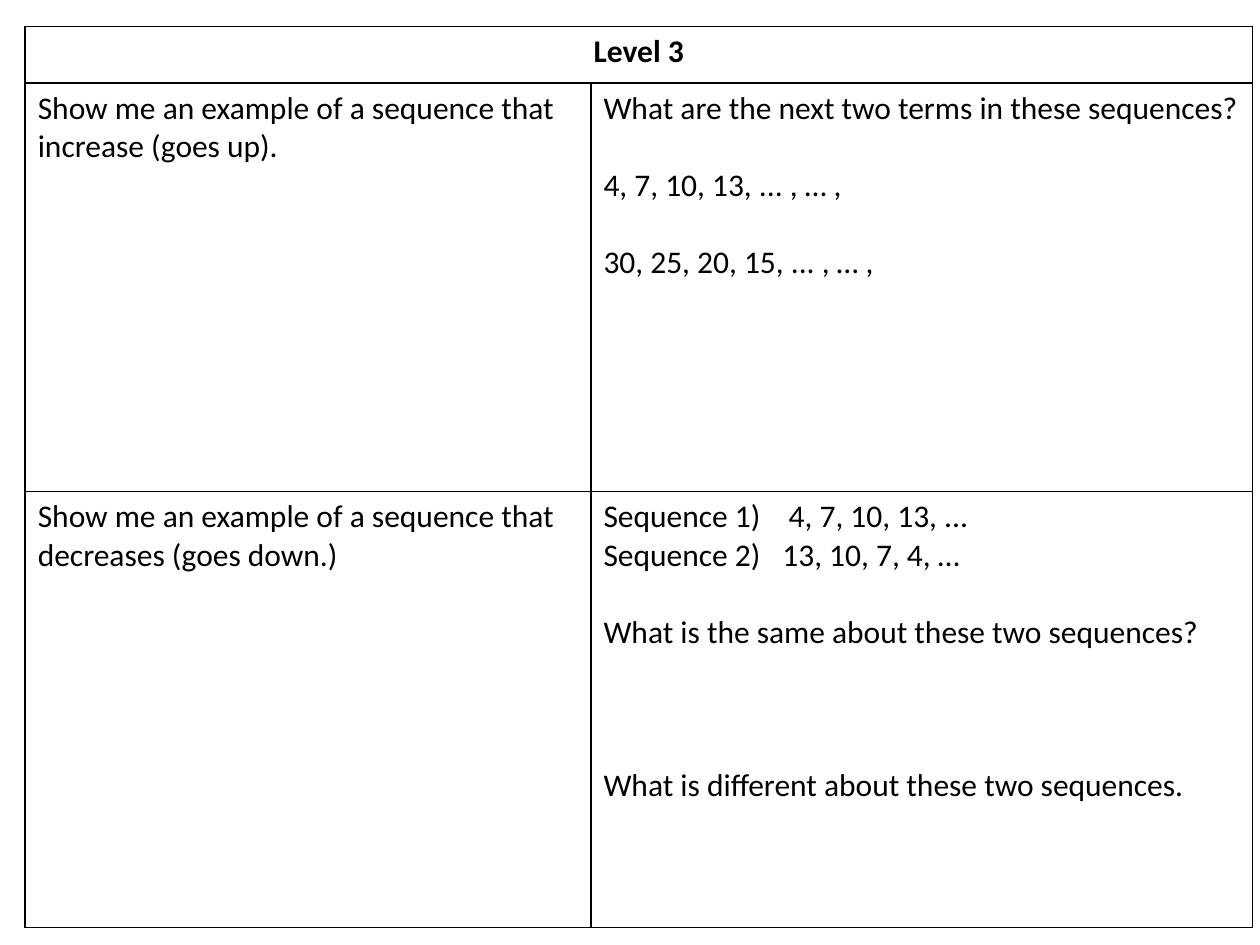
from dataclasses import dataclass

from lxml import etree
from pptx import Presentation, util as u
from pptx.dml.color import RGBColor
from pptx.enum import text as t
from pptx.oxml.ns import qn


@dataclass(frozen=True)
class Theme:
    font: str = "Calibri"
    size: int = 18
    ink: str = "000000"
    rule: float = 1
    line: int = 22  # height of one text line, in points


def write(para, words, theme, bold=False, align=t.PP_ALIGN.LEFT, skip=0, tab=None):
    """Fill a paragraph; skip is the number of lines left open above it."""
    para.alignment = align
    if skip:
        para.space_before = u.Pt(skip * theme.line)
    if tab:
        stops = etree.SubElement(para._p.get_or_add_pPr(), qn("a:tabLst"))
        etree.SubElement(stops, qn("a:tab"), pos=str(u.Inches(tab)), algn="l")
    run = para.add_run()
    run.text = words
    font = run.font
    font.name, font.size, font.bold = theme.font, u.Pt(theme.size), bold
    font.color.rgb = RGBColor.from_string(theme.ink)


class Sheet:
    def __init__(self, slide, theme):
        self.slide, self.theme = slide, theme

    def grid(self, left, top, cols, rows):
        frame = self.slide.shapes.add_table(
            len(rows), len(cols), u.Inches(left), u.Inches(top),
            u.Inches(sum(cols)), u.Inches(sum(rows)))
        table = frame.table
        table.first_row = table.horz_banding = False
        for col, width in zip(table.columns, cols):
            col.width = u.Inches(width)
        for row, height in zip(table.rows, rows):
            row.height = u.Inches(height)
        for cell in table.iter_cells():
            self.frame(cell)
        return table

    def frame(self, cell):
        """Rule all four sides of a cell and clear its fill."""
        props = cell._tc.get_or_add_tcPr()
        for side in ("lnL", "lnR", "lnT", "lnB"):
            line = etree.SubElement(props, qn("a:" + side), w=str(u.Pt(self.theme.rule)))
            fill = etree.SubElement(line, qn("a:solidFill"))
            etree.SubElement(fill, qn("a:srgbClr"), val=self.theme.ink)
        cell.fill.background()

    def fill(self, cell, *lines):
        """Write (words, format) pairs, one paragraph each."""
        body = cell.text_frame
        for i, (words, form) in enumerate(lines):
            para = body.add_paragraph() if i else body.paragraphs[0]
            write(para, words, self.theme, **form)


def main():
    deck = Presentation()
    deck.slide_width, deck.slide_height = u.Inches(10), u.Inches(7.5)
    sheet = Sheet(deck.slides.add_slide(deck.slide_layouts[6]), Theme())

    table = sheet.grid(0.2, 0.21, cols=(4.49, 5.25), rows=(0.45, 3.24, 3.46))
    head = table.cell(0, 0)
    head.merge(table.cell(0, 1))
    sheet.fill(head, ("Level 3", dict(bold=True, align=t.PP_ALIGN.CENTER)))

    sheet.fill(table.cell(1, 0),
               ("Show me an example of a sequence that increase (goes up).", {}))
    sheet.fill(table.cell(1, 1),
               ("What are the next two terms in these sequences?", {}),
               ("4, 7, 10, 13, ... , … ,", dict(skip=1)),
               ("30, 25, 20, 15, ... , … ,", dict(skip=1)))
    sheet.fill(table.cell(2, 0),
               ("Show me an example of a sequence that decreases (goes down.)", {}))
    sheet.fill(table.cell(2, 1),
               ("Sequence 1)\t4, 7, 10, 13, ...", dict(tab=1.47)),
               ("Sequence 2)\t13, 10, 7, 4, …", dict(tab=1.42)),
               ("What is the same about these two sequences?", dict(skip=1)),
               ("What is different about these two sequences.", dict(skip=3)))
    deck.save("out.pptx")


if __name__ == "__main__":
    main()
